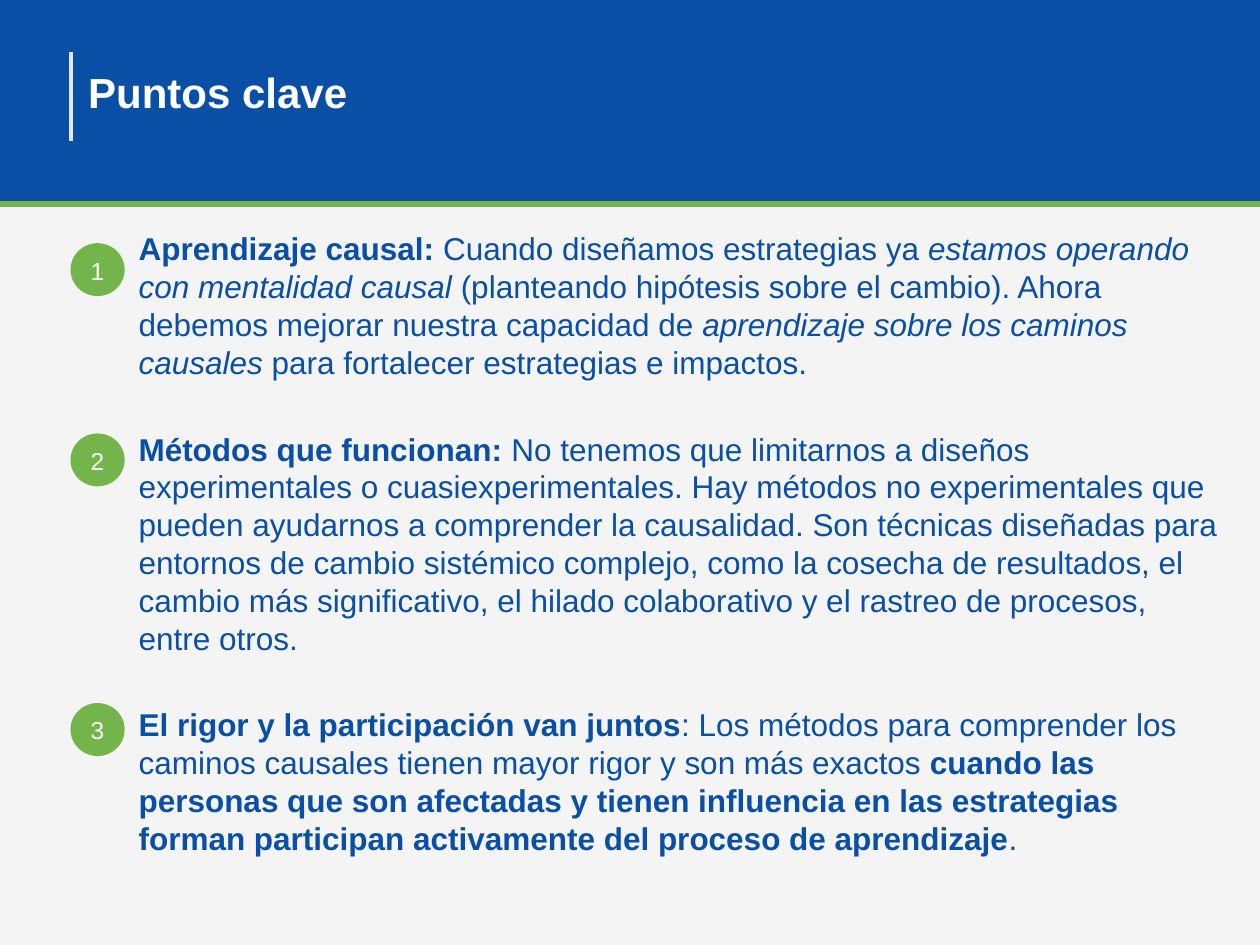
from lxml import etree
from pptx import Presentation
from pptx.dml.color import RGBColor
from pptx.enum.shapes import MSO_CONNECTOR, MSO_SHAPE
from pptx.enum.text import MSO_ANCHOR, MSO_AUTO_SIZE, PP_ALIGN
from pptx.oxml.ns import qn
from pptx.util import Inches, Pt

RECTANGLE, OVAL = MSO_SHAPE.RECTANGLE, MSO_SHAPE.OVAL
STRAIGHT = MSO_CONNECTOR.STRAIGHT
LEFT, CENTER = PP_ALIGN.LEFT, PP_ALIGN.CENTER
TOP, MIDDLE = MSO_ANCHOR.TOP, MSO_ANCHOR.MIDDLE
NO_AUTOFIT = MSO_AUTO_SIZE.NONE

BLUE, GREEN, GRAY, PALE, WHITE = "0A4FA6", "73B54B", "E5E5E5", "F4F4F4", "FFFFFF"

KEY_POINTS = [
    (1.93, [
        ("Aprendizaje causal: ", "bold"),
        ("Cuando diseñamos estrategias ya ", ""),
        ("estamos operando con mentalidad causal", "italic"),
        (" (planteando hipótesis sobre el cambio). Ahora debemos mejorar "
         "nuestra capacidad de ", ""),
        ("aprendizaje sobre los caminos causales ", "italic"),
        ("para fortalecer estrategias e impactos.", ""),
    ]),
    (3.44, [
        ("Métodos que funcionan: ", "bold"),
        ("No tenemos que limitarnos a diseños experimentales o "
         "cuasiexperimentales. Hay métodos no experimentales que pueden "
         "ayudarnos a comprender la causalidad. Son técnicas diseñadas para "
         "entornos de cambio sistémico complejo, como la cosecha de "
         "resultados, el cambio más significativo, el hilado colaborativo y "
         "el rastreo de procesos, entre otros.", ""),
    ]),
    (5.58, [
        ("El rigor y la participación van juntos", "bold"),
        (": Los métodos para comprender los caminos causales tienen mayor "
         "rigor y son más exactos ", ""),
        ("cuando las personas que son afectadas y tienen influencia en las "
         "estrategias forman participan activamente del proceso de "
         "aprendizaje", "bold"),
        (".", ""),
    ]),
]


def color(value):
    return RGBColor.from_string(value)


def add_span(para, text, size, fill, bold=False, italic=False):
    span = para.add_run()
    span.text = text
    font = span.font
    font.name, font.size = "Arial", Pt(size)
    font.bold, font.italic = bold, italic
    font.color.rgb = color(fill)


class SlideBuilder:
    def __init__(self, deck):
        self.page = deck.slides.add_slide(deck.slide_layouts[1])
        background = self.page.background.fill
        background.solid()
        background.fore_color.rgb = color(PALE)

    def shape(self, kind, left, top, width, height, fill):
        shape = self.page.shapes.add_shape(
            kind, Inches(left), Inches(top), Inches(width), Inches(height))
        shape.shadow.inherit = False
        shape.fill.solid()
        shape.fill.fore_color.rgb = color(fill)
        shape.line.fill.background()
        return shape

    def line(self, start, end, fill, width):
        line = self.page.shapes.add_connector(
            STRAIGHT, *(Inches(value) for value in (*start, *end)))
        line.line.color.rgb = color(fill)
        line.line.width = Pt(width)
        etree.SubElement(line.element.spPr, qn("a:effectLst"))

    def frame(self, box, inset, anchor):
        frame = box.text_frame
        frame.word_wrap = True
        frame.auto_size = NO_AUTOFIT
        frame.vertical_anchor = anchor
        frame.margin_left = frame.margin_right = Inches(inset)
        frame.margin_top = frame.margin_bottom = Inches(inset)
        return frame

    def place(self, box, left, top, width, height):
        box.left, box.top = Inches(left), Inches(top)
        box.width, box.height = Inches(width), Inches(height)
        box.element.getparent().append(box.element)

    def title(self, text):
        box = self.page.shapes.title
        self.place(box, 0.65, 0.44, 7.08, 0.63)
        para = self.frame(box, 0.05, MIDDLE).paragraphs[0]
        para.alignment = LEFT
        para.line_spacing = 0.9
        add_span(para, text, 24, WHITE, bold=True)

    def body(self, points):
        box = self.page.placeholders[1]
        self.place(box, 1.1, 1.82, 8.6, 5.02)
        frame = self.frame(box, 0, TOP)
        for index, spans in enumerate(points):
            para = frame.add_paragraph() if index else frame.paragraphs[0]
            properties = para._p.get_or_add_pPr()
            properties.set("marL", "0")
            properties.set("indent", "0")
            etree.SubElement(properties, qn("a:buNone"))
            para.alignment = LEFT
            para.line_spacing = 1.0
            para.space_before = Pt(28 if index else 0)
            for text, style in spans:
                add_span(para, text, 18, BLUE,
                         bold=style == "bold", italic=style == "italic")

    def badge(self, number, top):
        badge = self.shape(OVAL, 0.56, top, 0.43, 0.42, GREEN)
        frame = self.frame(badge, 0, MIDDLE)
        frame.margin_top = Inches(0.01)
        para = frame.paragraphs[0]
        para.alignment = CENTER
        add_span(para, str(number), 14, WHITE)


def main():
    deck = Presentation()
    deck.slide_width, deck.slide_height = Inches(10), Inches(7.5)
    builder = SlideBuilder(deck)
    builder.shape(RECTANGLE, 0, 0, 10, 1.63, BLUE)
    builder.line((0, 1.62), (10, 1.62), GREEN, 3)
    builder.body([spans for _, spans in KEY_POINTS])
    for number, (top, _) in enumerate(KEY_POINTS, start=1):
        builder.badge(number, top)
    builder.title("Puntos clave")
    builder.line((0.56, 0.41), (0.56, 1.12), GRAY, 2.25)
    deck.save("out.pptx")


if __name__ == "__main__":
    main()
